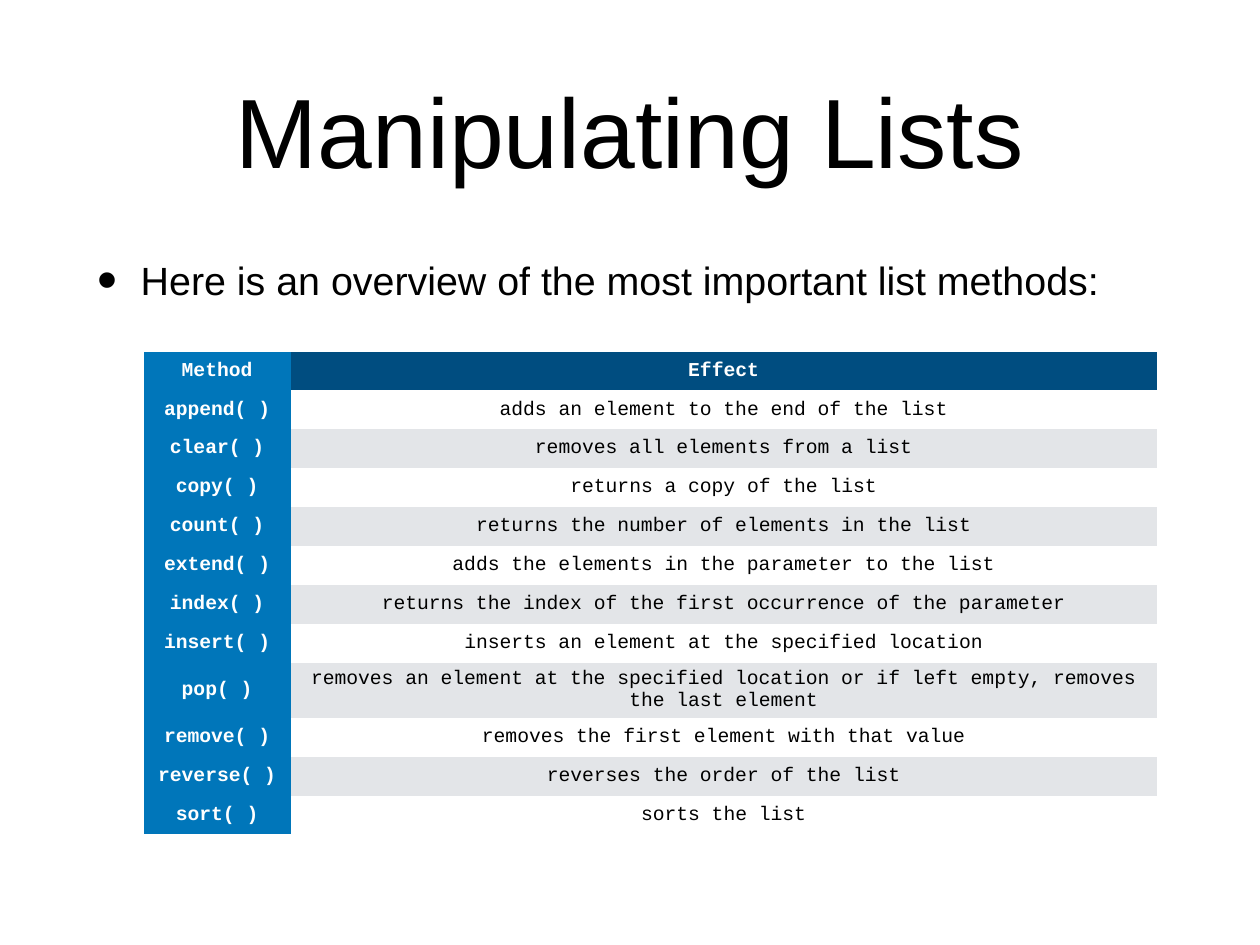
import pptx
import pptx.util
import pptx.dml.color
import pptx.enum.text
import pptx.oxml
import lxml.etree

RGBColor = pptx.dml.color.RGBColor
Inches = pptx.util.Inches
Pt = pptx.util.Pt
ALIGN = pptx.enum.text.PP_ALIGN
ANCHOR = pptx.enum.text.MSO_ANCHOR

BLACK = RGBColor(0x00, 0x00, 0x00)
WHITE = RGBColor(0xFF, 0xFF, 0xFF)
NAVY = RGBColor(0x00, 0x4D, 0x80)
BLUE = RGBColor(0x00, 0x76, 0xBA)
GREY = RGBColor(0xE3, 0xE5, 0xE8)

WIDTH, HEIGHT = 14.22, 10.67
INSET = Inches(0.06)
PLAIN_TABLE_STYLE = "{2D5ABB26-0587-4C30-8999-92F81FD0307C}"

METHODS = [
    ("Method", "Effect"),
    ("append( )", "adds an element to the end of the list"),
    ("clear( )", "removes all elements from a list"),
    ("copy( )", "returns a copy of the list"),
    ("count( )", "returns the number of elements in the list"),
    ("extend( )", "adds the elements in the parameter to the list"),
    ("index( )", "returns the index of the first occurrence of the parameter"),
    ("insert( )", "inserts an element at the specified location"),
    ("pop( )", "removes an element at the specified location or if left empty, "
               "removes the last element"),
    ("remove( )", "removes the first element with that value"),
    ("reverse( )", "reverses the order of the list"),
    ("sort( )", "sorts the list"),
]


def share_box(left, top, width, height):
    """Turn shares of the slide's size into a box of lengths."""
    return (Inches(left * WIDTH), Inches(top * HEIGHT),
            Inches(width * WIDTH), Inches(height * HEIGHT))


def set_insets(target):
    """Give a text frame or table cell the same margin on every side."""
    target.margin_left = target.margin_right = INSET
    target.margin_top = target.margin_bottom = INSET


def write(frame, text, font, size, color, align, bold=False):
    """Put one formatted paragraph into a text frame and return it."""
    frame.text = text
    para = frame.paragraphs[0]
    para.alignment = align
    for span in para.runs:
        span.font.name = font
        span.font.size = Pt(size)
        span.font.bold = bold
        span.font.color.rgb = color
    return para


def prepare_frame(frame, anchor):
    """Set wrapping, margins and anchor of a text frame."""
    frame.word_wrap = True
    frame.auto_size = pptx.enum.text.MSO_AUTO_SIZE.NONE
    frame.vertical_anchor = anchor
    set_insets(frame)


def add_title(page, box, text):
    """Place the title placeholder in the box."""
    title = page.shapes.title
    title.left, title.top, title.width, title.height = box
    prepare_frame(title.text_frame, ANCHOR.MIDDLE)
    write(title.text_frame, text, "Arial", 80, BLACK, ALIGN.CENTER)


def add_bullet(page, box, text):
    """Place a bulleted line at the top of the box."""
    frame = page.shapes.add_textbox(*box).text_frame
    prepare_frame(frame, ANCHOR.TOP)
    para = write(frame, text, "Arial", 32, BLACK, ALIGN.LEFT)
    properties = para._p.get_or_add_pPr()
    indent = Inches(0.49)
    properties.set("marL", str(indent))
    properties.set("indent", str(-indent))
    for tag, name, value in (("a:buSzPct", "val", "145000"),
                             ("a:buFont", "typeface", "Arial"),
                             ("a:buChar", "char", "•")):
        element = lxml.etree.SubElement(properties, pptx.oxml.ns.qn(tag))
        element.set(name, value)


def add_methods_table(page, box, column_shares, entries):
    """Fill the box with a header row, a method column and banded rows."""
    left, top, width, height = box
    table_frame = page.shapes.add_table(len(entries), len(column_shares), *box)
    table = table_frame.table
    table.horz_banding = False
    table._tbl.tblPr.find(pptx.oxml.ns.qn("a:tableStyleId")).text = PLAIN_TABLE_STYLE
    for column, share in zip(table.columns, column_shares):
        column.width = int(width * share)
    for row_index, entry in enumerate(entries):
        table.rows[row_index].height = height // len(entries)
        for column_index, text in enumerate(entry):
            label = row_index == 0 or column_index == 0
            if column_index == 0:
                fill = BLUE
            elif row_index == 0:
                fill = NAVY
            else:
                fill = WHITE if row_index % 2 else GREY
            cell = table.cell(row_index, column_index)
            cell.fill.solid()
            cell.fill.fore_color.rgb = fill
            cell.vertical_anchor = ANCHOR.MIDDLE
            set_insets(cell)
            write(cell.text_frame, text, "Courier New", 16,
                  WHITE if label else BLACK, ALIGN.CENTER, label)


def main():
    """Build the slide and save the deck."""
    deck = pptx.Presentation()
    deck.slide_width, deck.slide_height = Inches(WIDTH), Inches(HEIGHT)
    page = deck.slides.add_slide(deck.slide_layouts[5])
    add_title(page, share_box(0.073, 0.026, 0.854, 0.221), "Manipulating Lists")
    add_bullet(page, share_box(0.073, 0.265, 0.854, 0.645),
               "Here is an overview of the most important list methods:")
    add_methods_table(page, share_box(0.114, 0.372, 0.804, 0.494),
                      (0.145, 0.855), METHODS)
    deck.save("out.pptx")


if __name__ == "__main__":
    main()
